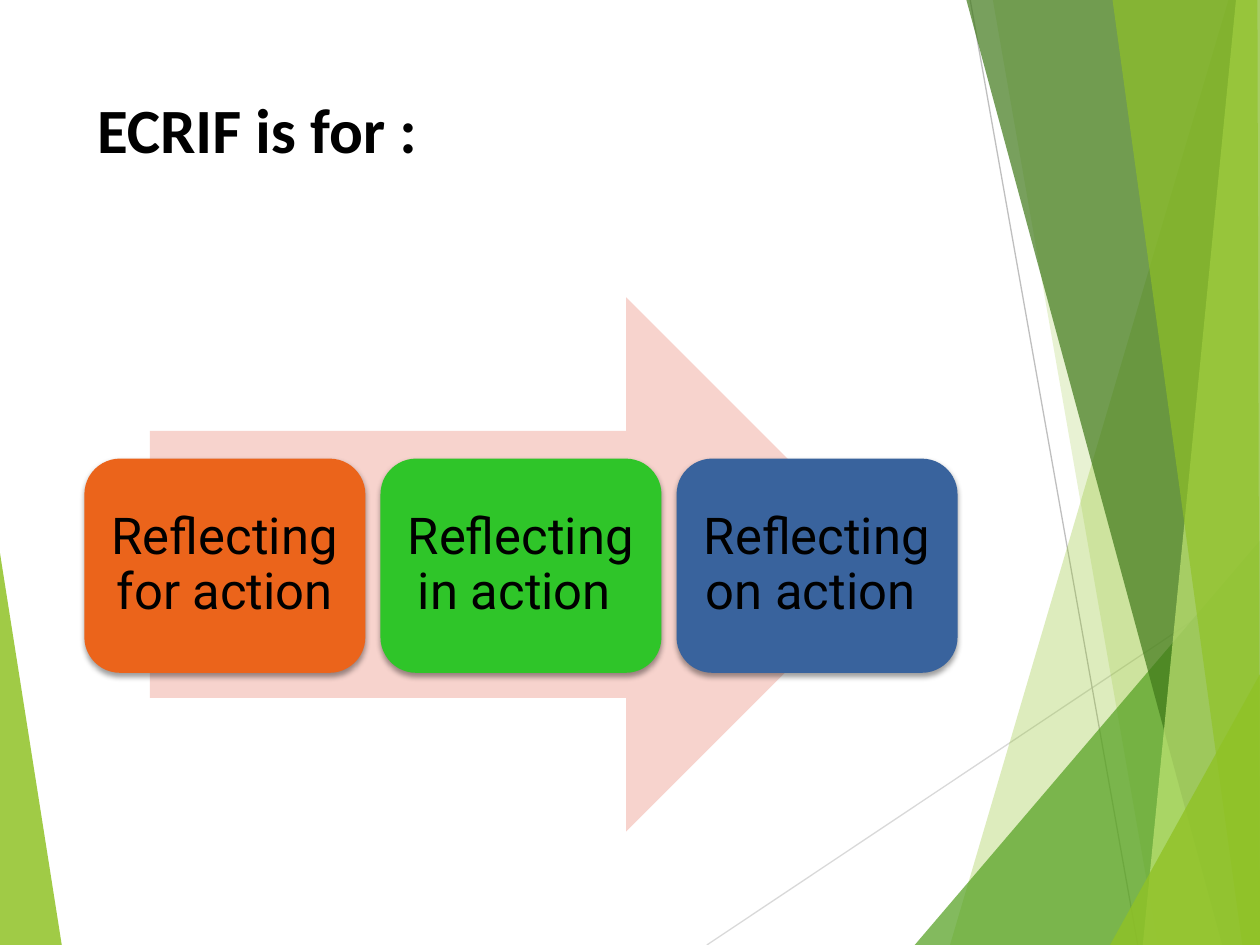
from lxml import etree
from pptx import Presentation, util as u
from pptx.dml.color import RGBColor
from pptx.enum import shapes, text
from pptx.oxml.ns import qn

COLORS = {
    "lime": "90C226", "green": "54A021", "forest": "3F7819", "pale": "C0E474",
    "line": "D9D9D9", "line_dark": "BFBFBF", "arrow": "F7D3CD", "black": "000000",
    "orange": "EB641B", "bright": "2FC529", "blue": "39639D",
}
W, H = 10, 7.5
FACETS = [
    ("lime", 85, [(0, 4.39), (0.49, H), (0, H)]),
    ("lime", 30, [(9.75, 0), (7.54, H), (W, H), (W, 0)]),
    ("lime", 20, [(7.88, 0), (9.19, H), (W, H), (W, 0)]),
    ("green", 72, [(7.26, H), (W, 4.29), (W, H)]),
    ("forest", 70, [(7.67, 0), (9.7, H), (W, H), (W, 0)]),
    ("pale", 70, [(9.81, 0), (9.07, H), (W, H), (W, 0)]),
    ("lime", 65, [(8.83, 0), (9.86, H), (W, H), (9.98, 0)]),
    ("lime", 80, [(8.81, H), (W, 5.35), (W, H)]),
]
RAYS = [("line", (5.61, H), (W, 4.57)), ("line_dark", (7.7, 0), (9.03, H))]
STAGES = [
    ("Reflecting for action", "orange"),
    ("Reflecting in action ", "bright"),
    ("Reflecting on action ", "blue"),
]


def rgb(name):
    return RGBColor.from_string(COLORS[name])


class Deck:
    title_font = {"name": "Calibri", "size": u.Pt(36), "bold": True}
    stage_font = {"name": "Roboto", "size": u.Pt(29), "bold": False}
    margins = ("margin_left", "margin_top", "margin_right", "margin_bottom")

    def __init__(self):
        self.prs = Presentation()
        self.prs.slide_width, self.prs.slide_height = u.Inches(W), u.Inches(H)
        self.s = self.prs.slides.add_slide(self.prs.slide_layouts[5])

    def paint(self, sp, color, alpha=100):
        sp.fill.solid()
        sp.fill.fore_color.rgb = rgb(color)
        sp.line.fill.background()
        sp.shadow.inherit = False
        if alpha < 100:
            clr = sp._element.spPr.find(qn("a:solidFill")).find(qn("a:srgbClr"))
            etree.SubElement(clr, qn("a:alpha"), val=str(alpha * 1000))

    def label(self, tf, words, font, frame, para):
        tf.text = words
        p = tf.paragraphs[0]
        r = p.runs[0]
        for obj, values in ((tf, frame), (p, para), (r.font, font)):
            for key, value in values.items():
                setattr(obj, key, value)
        r.font.color.rgb = rgb("black")

    def title(self, words, x, y, w, h):
        sp = self.s.shapes.title
        sp.left, sp.top, sp.width, sp.height = map(u.Inches, (x, y, w, h))
        self.label(sp.text_frame, words, self.title_font,
                   {"vertical_anchor": text.MSO_ANCHOR.TOP, "word_wrap": True},
                   {"alignment": text.PP_ALIGN.LEFT})

    def facet(self, color, alpha, points):
        start, *rest = [(u.Inches(x), u.Inches(y)) for x, y in points]
        fb = self.s.shapes.build_freeform(*start)
        fb.add_line_segments(rest, close=True)
        self.paint(fb.convert_to_shape(), color, alpha)

    def ray(self, color, start, end):
        cx = self.s.shapes.add_connector(
            shapes.MSO_CONNECTOR.STRAIGHT, *map(u.Inches, start + end))
        cx.line.color.rgb = rgb(color)
        cx.line.width = u.Pt(0.75)
        etree.SubElement(cx._element.spPr, qn("a:effectLst"))

    def shape(self, kind, color, x, y, w, h):
        sp = self.s.shapes.add_shape(kind, *map(u.Inches, (x, y, w, h)))
        self.paint(sp, color)
        return sp

    def stage(self, words, color, x, y, w, h):
        sp = self.shape(shapes.MSO_SHAPE.ROUNDED_RECTANGLE, color, x, y, w, h)
        effects = sp._element.spPr.find(qn("a:effectLst"))
        shadow = etree.SubElement(
            effects, qn("a:outerShdw"), blurRad=str(u.Pt(3.5)),
            dist=str(u.Pt(2)), dir="5400000", rotWithShape="0")
        clr = etree.SubElement(shadow, qn("a:srgbClr"), val=COLORS["black"])
        etree.SubElement(clr, qn("a:alpha"), val="38000")
        frame = dict.fromkeys(self.margins, u.Inches(0.12))
        frame.update(vertical_anchor=text.MSO_ANCHOR.MIDDLE, word_wrap=True)
        self.label(sp.text_frame, words, self.stage_font, frame,
                   {"alignment": text.PP_ALIGN.CENTER, "line_spacing": 0.9})


def main():
    deck = Deck()
    deck.facet(*FACETS[0])
    for ray in RAYS:
        deck.ray(*ray)
    for facet in FACETS[1:]:
        deck.facet(*facet)
    deck.title("ECRIF is for :", 0.67, 0.67, 6.94, 1.44)
    deck.shape(shapes.MSO_SHAPE.RIGHT_ARROW, "arrow", 1.19, 2.36, 5.9, 4.24)
    for i, (words, color) in enumerate(STAGES):
        deck.stage(words, color, 0.67 + 2.35 * i, 3.64, 2.23, 1.7)
    deck.prs.save("out.pptx")


if __name__ == "__main__":
    main()
